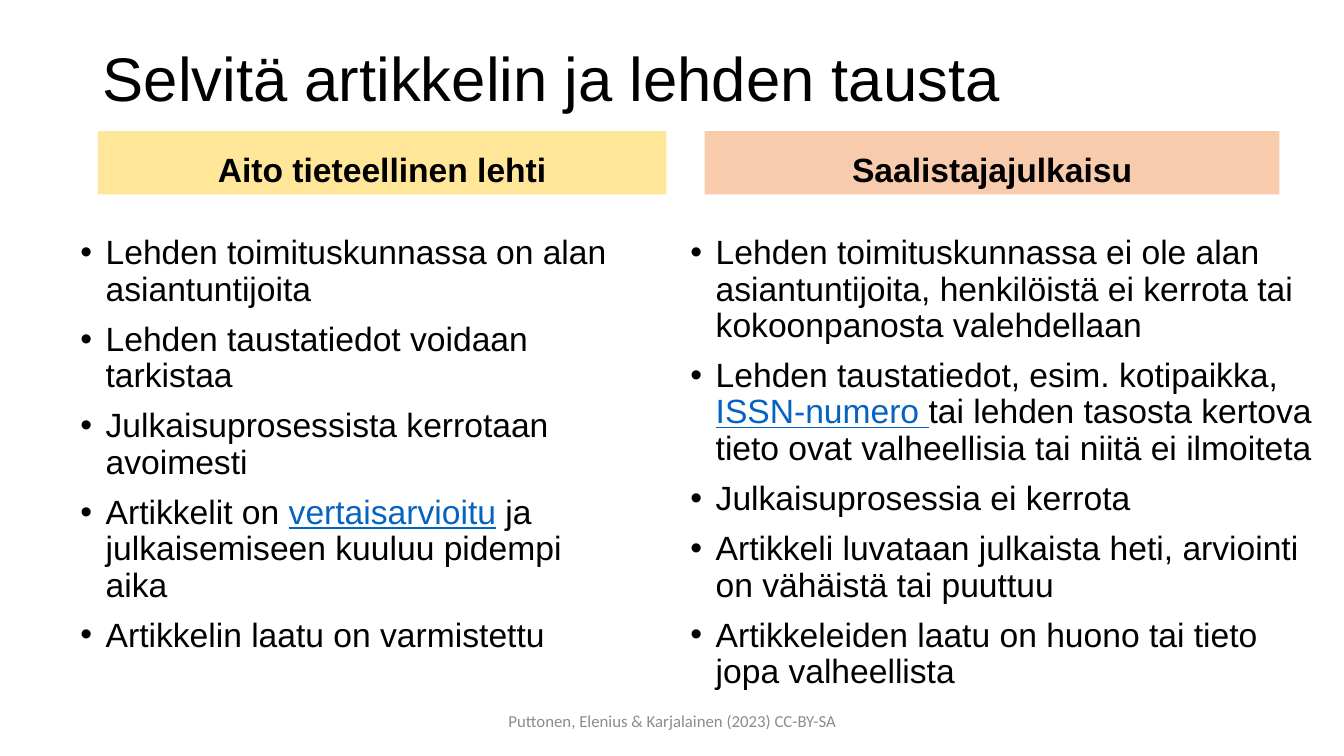
"""Build a slide that compares genuine journals with predatory ones."""
from lxml.etree import SubElement
from pptx import Presentation
from pptx.dml.color import RGBColor
from pptx.enum.shapes import MSO_SHAPE
from pptx.enum.text import MSO_ANCHOR, PP_ALIGN
from pptx.oxml.ns import qn
from pptx.util import Inches, Pt

BLACK, BLUE, GREY = "000000", "0563C1", "8C8C8C"
MARK = "|"

GENUINE = [
    "Lehden toimituskunnassa on alan asiantuntijoita",
    "Lehden taustatiedot voidaan tarkistaa",
    "Julkaisuprosessista kerrotaan avoimesti",
    "Artikkelit on |vertaisarvioitu| ja julkaisemiseen kuuluu pidempi aika",
    "Artikkelin laatu on varmistettu",
]
PREDATORY = [
    "Lehden toimituskunnassa ei ole alan asiantuntijoita, "
    "henkilöistä ei kerrota tai kokoonpanosta valehdellaan",
    "Lehden taustatiedot, esim. kotipaikka, |ISSN-numero |tai lehden "
    "tasosta kertova tieto ovat valheellisia tai niitä ei ilmoiteta",
    "Julkaisuprosessia ei kerrota",
    "Artikkeli luvataan julkaista heti, arviointi on vähäistä tai puuttuu",
    "Artikkeleiden laatu on huono tai tieto jopa valheellista",
]


def paint(color):
    return RGBColor.from_string(color)


def style(run, size, color=BLACK, face="Arial", bold=False):
    font = run.font
    font.name, font.size, font.bold = face, Pt(size), bold
    font.color.rgb = paint(color)


def space(para, before=10):
    para.line_spacing = 0.9
    para.space_before = Pt(before)


def add_title(slide, text):
    title = slide.shapes.title
    title.left, title.top = Inches(0.92), Inches(0.4)
    title.width, title.height = Inches(11.5), Inches(0.82)
    frame = title.text_frame
    frame.text = text
    frame.vertical_anchor = MSO_ANCHOR.MIDDLE
    para = frame.paragraphs[0]
    para.alignment = PP_ALIGN.LEFT
    space(para, 0)
    style(para.runs[0], 44)


def add_header(slide, left, width, text, fill):
    box = slide.shapes.add_shape(
        MSO_SHAPE.RECTANGLE, Inches(left), Inches(1.3), Inches(width), Inches(0.63))
    box.shadow.inherit = False
    box.fill.solid()
    box.fill.fore_color.rgb = paint(fill)
    box.line.fill.background()
    frame = box.text_frame
    frame.text = text
    frame.vertical_anchor = MSO_ANCHOR.BOTTOM
    para = frame.paragraphs[0]
    para.alignment = PP_ALIGN.CENTER
    space(para)
    style(para.runs[0], 24, bold=True)


def add_bullet(para):
    props = para._p.get_or_add_pPr()
    props.set("marL", str(Inches(0.25)))
    props.set("indent", str(-Inches(0.25)))
    SubElement(props, qn("a:buFont")).set("typeface", "Arial")
    SubElement(props, qn("a:buChar")).set("char", "•")


def add_list(slide, left, width, height, items):
    box = slide.shapes.add_textbox(
        Inches(left), Inches(2.29), Inches(width), Inches(height))
    frame = box.text_frame
    frame.word_wrap = True
    for index, item in enumerate(items):
        para = frame.add_paragraph() if index else frame.paragraphs[0]
        space(para)
        add_bullet(para)
        for part, text in enumerate(item.split(MARK)):
            run = para.add_run()
            run.text = text
            linked = part % 2 == 1
            style(run, 24, BLUE if linked else BLACK)
            run.font.underline = linked


def add_footer(slide, text):
    box = slide.shapes.add_textbox(
        Inches(4.42), Inches(6.95), Inches(4.5), Inches(0.4))
    frame = box.text_frame
    frame.word_wrap = True
    frame.text = text
    frame.vertical_anchor = MSO_ANCHOR.MIDDLE
    para = frame.paragraphs[0]
    para.alignment = PP_ALIGN.CENTER
    style(para.runs[0], 12, GREY, "Calibri")


def main():
    deck = Presentation()
    deck.slide_width, deck.slide_height = Inches(13.33), Inches(7.5)
    slide = deck.slides.add_slide(deck.slide_layouts[5])
    add_title(slide, "Selvitä artikkelin ja lehden tausta")
    add_header(slide, 0.97, 5.64, "Aito tieteellinen lehti", "FFE699")
    add_list(slide, 0.7, 5.64, 5.01, GENUINE)
    add_header(slide, 6.99, 5.7, "Saalistajajulkaisu", "F8CBAD")
    add_list(slide, 6.75, 6.41, 4.66, PREDATORY)
    add_footer(slide, "Puttonen, Elenius & Karjalainen (2023) CC-BY-SA")
    deck.save("out.pptx")


if __name__ == "__main__":
    main()
